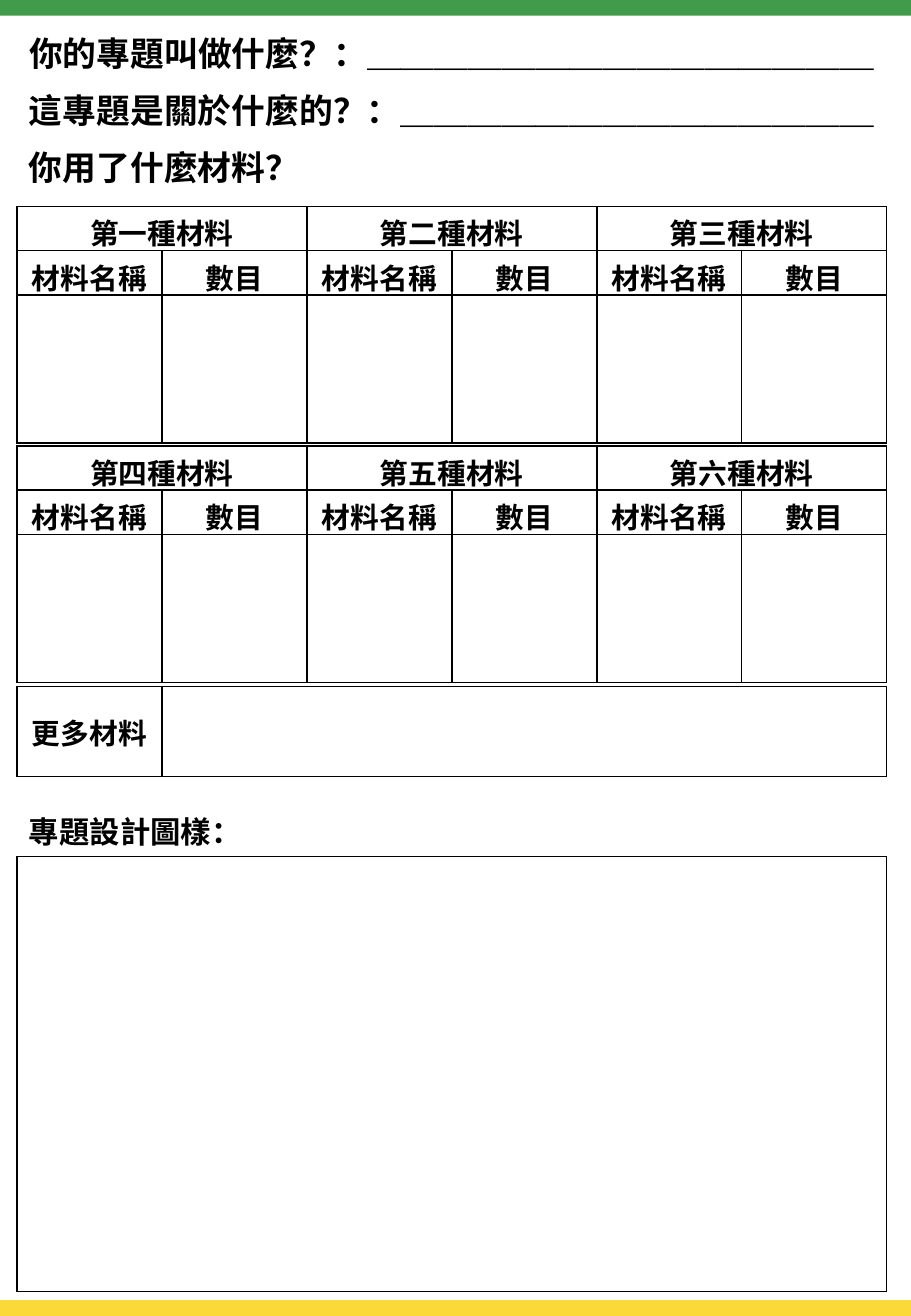
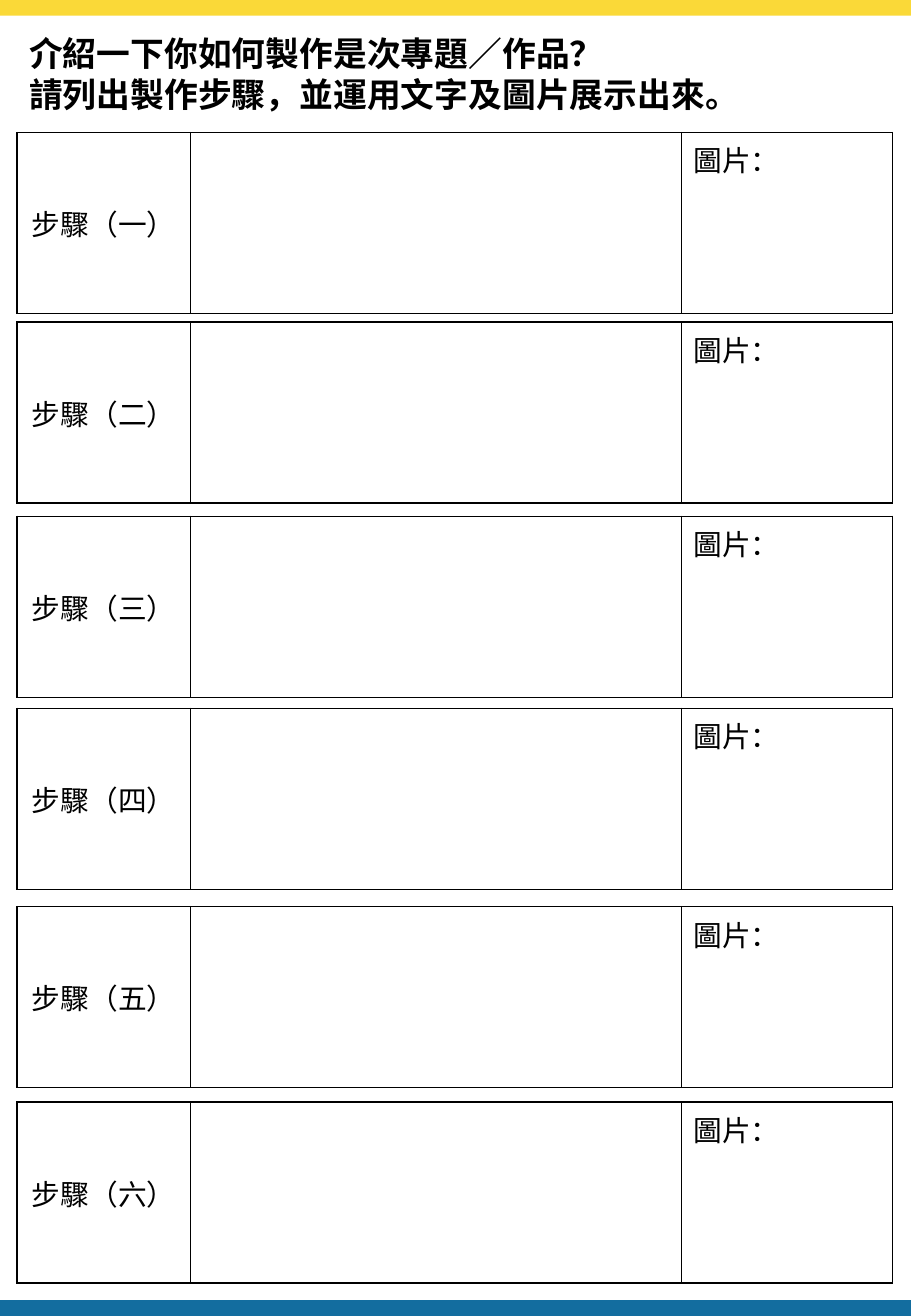
from lxml.etree import SubElement
from pptx import Presentation
from pptx.dml.color import RGBColor
from pptx.enum.shapes import MSO_SHAPE
from pptx.enum.text import MSO_ANCHOR, MSO_AUTO_SIZE, PP_ALIGN
from pptx.oxml.ns import qn
from pptx.util import Inches, Pt

COLORS = {"text": "000000", "green": "429B4B", "yellow": "FAD938", "blue": "136D9F"}
FONT = "Calibri"
LEFT = 0.14
BAND_HEIGHT = 0.13
PAGE_WIDTH, PAGE_HEIGHT = 7.5, 10.83


def write(frame, text, size=17, bold=True, align=PP_ALIGN.LEFT, anchor=MSO_ANCHOR.TOP):
    """Fill a frame or cell with text, one paragraph per line."""
    frame.vertical_anchor = anchor
    # A table cell keeps its paragraphs in a text frame of its own.
    body = getattr(frame, "text_frame", frame)
    body.text = text
    for para in body.paragraphs:
        para.alignment = align
        para.font.name = FONT
        para.font.size = Pt(size)
        para.font.bold = bold
        para.font.color.rgb = RGBColor.from_string(COLORS["text"])


def add_grid(page, top, columns, rows):
    """Add an unfilled table with thin black borders."""
    frame = page.shapes.add_table(
        len(rows), len(columns), Inches(LEFT), Inches(top),
        Inches(sum(columns)), Inches(sum(rows)))
    table = frame.table
    table.first_row = table.horz_banding = False
    for column, width in zip(table.columns, columns):
        column.width = Inches(width)
    for row, height in zip(table.rows, rows):
        row.height = Inches(height)
    for cell in table.iter_cells():
        properties = cell._tc.get_or_add_tcPr()
        for side in ("a:lnL", "a:lnR", "a:lnT", "a:lnB"):
            line = SubElement(properties, qn(side), w=str(Pt(1)))
            fill = SubElement(line, qn("a:solidFill"))
            SubElement(fill, qn("a:srgbClr"), val=COLORS["text"])
        cell.fill.background()
    return table


deck = Presentation()
deck.slide_width, deck.slide_height = Inches(PAGE_WIDTH), Inches(PAGE_HEIGHT)

# Both pages: coloured bands and a title
page_styles = [
    ("green", "yellow", "你的專題叫做什麼？：＿＿＿＿＿＿＿＿＿＿＿＿＿＿＿", 7.21, 0.44),
    ("yellow", "blue",
     "介紹一下你如何製作是次專題／作品？\n請列出製作步驟，並運用文字及圖片展示出來。", 6.22, 0.77),
]
for top_color, bottom_color, heading, width, height in page_styles:
    page = deck.slides.add_slide(deck.slide_layouts[5])
    title = page.shapes.title
    title.left, title.top = Inches(LEFT), Inches(0.22)
    title.width, title.height = Inches(width), Inches(height)
    title.text_frame.word_wrap = False
    title.text_frame.auto_size = MSO_AUTO_SIZE.SHAPE_TO_FIT_TEXT
    write(title.text_frame, heading, size=20)
    for top, color in ((0, top_color), (PAGE_HEIGHT - BAND_HEIGHT, bottom_color)):
        band = page.shapes.add_shape(
            MSO_SHAPE.RECTANGLE, 0, Inches(top), Inches(PAGE_WIDTH), Inches(BAND_HEIGHT))
        band.shadow.inherit = False
        band.fill.solid()
        band.fill.fore_color.rgb = RGBColor.from_string(COLORS[color])
        band.line.fill.background()

project_page, steps_page = deck.slides

# Page 1: questions, materials and design sketch
questions = [
    ("這專題是關於什麼的？：＿＿＿＿＿＿＿＿＿＿＿＿＿＿", 0.69, 7.21, 0.44, 20),
    ("你用了什麼材料？", 1.16, 2.45, 0.44, 20),
    ("專題設計圖樣：", 6.64, 1.91, 0.4, 18),
]
for text, top, width, height, size in questions:
    box = project_page.shapes.add_textbox(
        Inches(LEFT), Inches(top), Inches(width), Inches(height))
    box.text_frame.word_wrap = size == 18
    box.text_frame.auto_size = MSO_AUTO_SIZE.SHAPE_TO_FIT_TEXT
    write(box.text_frame, text, size=size)

centered = {"align": PP_ALIGN.CENTER, "anchor": MSO_ANCHOR.MIDDLE}
table_width = 7.16
material_column = table_width / 6
for top, numbers in ((1.7, "一二三"), (3.67, "四五六")):
    materials = add_grid(project_page, top, [material_column] * 6, [0.36, 0.36, 1.22])
    for cell in materials.iter_cells():
        cell.margin_left = cell.margin_right = Inches(0.07)
        cell.margin_top = cell.margin_bottom = Inches(0.04)
    for index, number in enumerate(numbers):
        name_column, count_column = 2 * index, 2 * index + 1
        header = materials.cell(0, name_column)
        header.merge(materials.cell(0, count_column))
        write(header, f"第{number}種材料", **centered)
        write(materials.cell(1, name_column), "材料名稱", **centered)
        write(materials.cell(1, count_column), "數目", **centered)

more_materials = add_grid(
    project_page, 5.65, [material_column, table_width - material_column], [0.74])
write(more_materials.cell(0, 0), "更多材料", **centered)
add_grid(project_page, 7.05, [table_width], [3.58])

# Page 2: one table per step
step_tops = [1.09, 2.65, 4.25, 5.83, 7.46, 9.07]
for top, number in zip(step_tops, "一二三四五六"):
    step = add_grid(steps_page, top, [1.43, 4.04, 1.74], [1.49])
    write(step.cell(0, 0), f"步驟（{number}）", bold=False, **centered)
    write(step.cell(0, 2), "圖片：", bold=False)

deck.save("out.pptx")
